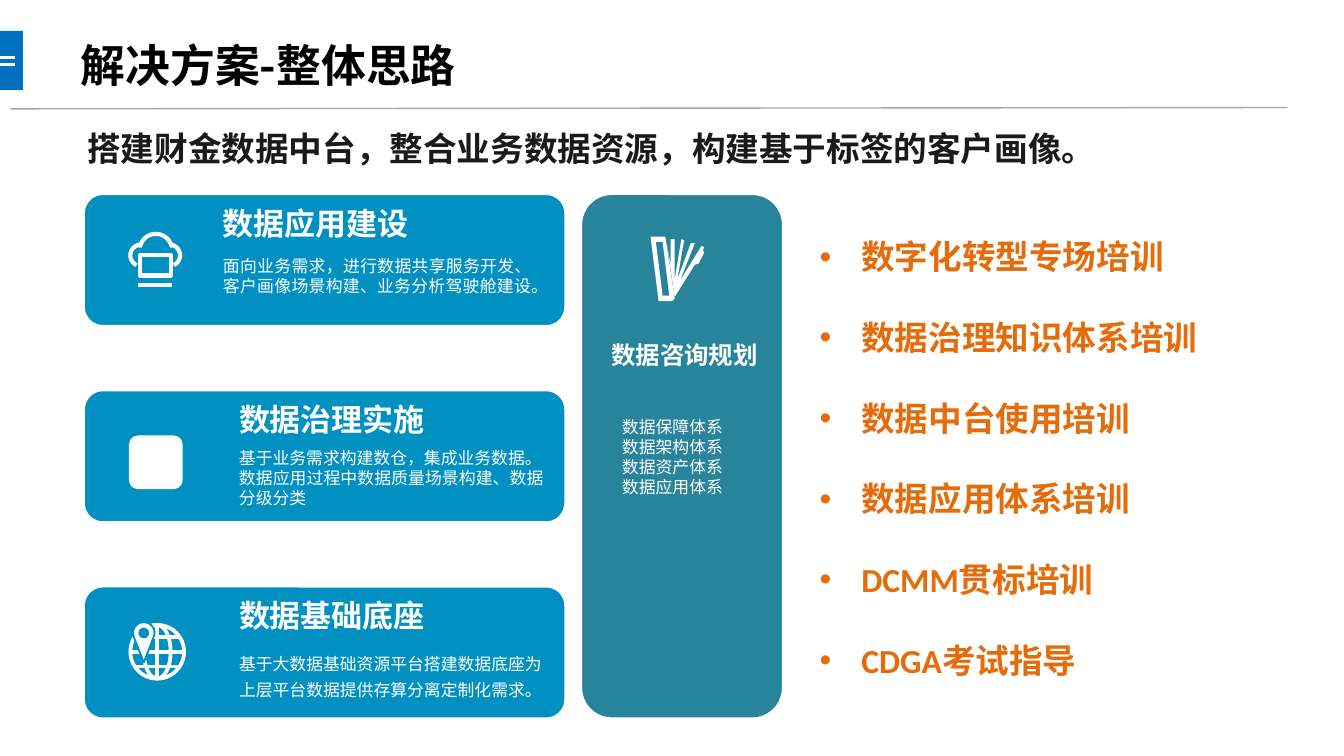
from math import cos, radians, sin, sqrt

from lxml.etree import SubElement
from pptx import Presentation
from pptx.dml.color import RGBColor
from pptx.enum.shapes import MSO_CONNECTOR, MSO_SHAPE
from pptx.enum.text import MSO_ANCHOR, PP_ALIGN
from pptx.oxml.ns import qn
from pptx.util import Inches, Pt

WHITE = RGBColor(0xFF, 0xFF, 0xFF)
BLACK = RGBColor(0, 0, 0)
INK = RGBColor(0x1A, 0x1A, 0x1A)
GREY = RGBColor(0xA6, 0xA6, 0xA6)
BLUE = RGBColor(0x00, 0x70, 0xC0)
SKY = RGBColor(0x00, 0x90, 0xC1)
TEAL = RGBColor(0x28, 0x84, 0x9B)
ORANGE = RGBColor(0xE4, 0x6C, 0x0A)

# Grid: a column of three cards, then the pillar
LEFT, TOP = 0.59, 1.41
CARD_W, CARD_H, STEP = 3.65, 1.05, 1.46
PILLAR_X, PILLAR_W = 4.29, 1.57

# Heading, body lines, text left, body width, body offset, alignment, spacing
CARDS = [
    ("数据应用建设",
     ["面向业务需求，进行数据共享服务开发、客户画像场景构建、业务分析驾驶舱建设。"],
     1.56, 2.49, 0.44, PP_ALIGN.JUSTIFY, None),
    ("数据治理实施",
     ["基于业务需求构建数仓，集成业务数据。",
      "数据应用过程中数据质量场景构建、数据分级分类"],
     1.68, 2.46, 0.41, PP_ALIGN.JUSTIFY, None),
    ("数据基础底座",
     ["基于大数据基础资源平台搭建数据底座为上层平台数据提供存算分离定制化需求。"],
     1.68, 2.48, 0.44, PP_ALIGN.LEFT, 1.3),
]
PLANS = ["数据保障体系", "数据架构体系", "数据资产体系", "数据应用体系"]
COURSES = ["数字化转型专场培训", "数据治理知识体系培训", "数据中台使用培训",
           "数据应用体系培训", "DCMM贯标培训", "CDGA考试指导"]


def style(para, size, color, bold=False, name="Calibri"):
    font = para.font
    font.size, font.bold, font.name = Pt(size), bold, name
    font.color.rgb = color
    props = para._p.get_or_add_pPr().find(qn("a:defRPr"))
    SubElement(props, qn("a:ea")).set("typeface", name)


def add_text(slide, box, lines, size, color, bold=False, name="Calibri",
             align=PP_ALIGN.LEFT, anchor=MSO_ANCHOR.TOP, space=None):
    frame = slide.shapes.add_textbox(*map(Inches, box)).text_frame
    frame.word_wrap, frame.vertical_anchor = True, anchor
    for i, line in enumerate(lines):
        para = frame.add_paragraph() if i else frame.paragraphs[0]
        para.text, para.alignment = line, align
        if space:
            para.line_spacing = space
        style(para, size, color, bold, name)
    return frame


def paint(shape, fill=None, line=None, width=1):
    shape.shadow.inherit = False
    if fill is None:
        shape.fill.background()
    else:
        shape.fill.solid()
        shape.fill.fore_color.rgb = fill
    if line is None:
        shape.line.fill.background()
    else:
        shape.line.color.rgb = line
        shape.line.width = Pt(width)


def add_box(slide, kind, box, fill=None, line=None, width=1):
    paint(slide.shapes.add_shape(kind, *map(Inches, box)), fill, line, width)


def add_line(slide, x1, y1, x2, y2, color, width):
    line = slide.shapes.add_connector(
        MSO_CONNECTOR.STRAIGHT, *map(Inches, (x1, y1, x2, y2)))
    line.line.color.rgb = color
    line.line.width = Pt(width)
    SubElement(line._element.spPr, qn("a:effectLst"))


def arc(x, y, r, start, end):
    return [(x + r * cos(radians(a)), y + r * sin(radians(a)))
            for a in range(start, end + 1, 10)]


def add_path(slide, loops, fill=None, line=None, width=1, close=True):
    loops = [[(Inches(x), Inches(y)) for x, y in loop] for loop in loops]
    build = slide.shapes.build_freeform(*loops[0][0], scale=1.0)
    for i, loop in enumerate(loops):
        if i:
            build.move_to(*loop[0])
        build.add_line_segments(loop[1:], close=close)
    paint(build.convert_to_shape(), fill, line, width)


def add_cloud(slide):
    edge = (arc(1.05, 1.9, 0.08, 115, 255) + arc(1.16, 1.86, 0.12, 195, 345)
            + arc(1.26, 1.9, 0.08, 285, 425))
    add_path(slide, [edge], line=WHITE, width=2.25, close=False)
    add_box(slide, MSO_SHAPE.RECTANGLE, (1.04, 1.9, 0.23, 0.15),
            SKY, WHITE, 2.25)
    add_line(slide, 1.03, 2.12, 1.28, 2.12, WHITE, 2.25)


def add_globe(slide):
    x, y, r = 1.17, 4.85, 0.2
    for half in (r, r / 2):
        add_box(slide, MSO_SHAPE.OVAL, (x - half, y - r, 2 * half, 2 * r),
                line=WHITE, width=2)
    add_line(slide, x, y - r, x, y + r, WHITE, 2)
    for rise in (-0.11, 0, 0.11):
        half = sqrt(r * r - rise * rise)
        add_line(slide, x - half, y + rise, x + half, y + rise, WHITE, 2)
    # Map pin over the globe
    pin = arc(1.07, 4.71, 0.08, 160, 380) + [(1.07, 4.93)]
    add_path(slide, [pin], WHITE, SKY, 1)
    add_box(slide, MSO_SHAPE.OVAL, (1.03, 4.67, 0.08, 0.08), SKY)


def add_book(slide):
    cover = [(4.84, 1.76), (4.95, 1.76), (5.02, 2.22), (5, 2.24), (4.9, 2.24)]
    hole = [(4.88, 1.8), (4.93, 1.8), (4.98, 2.2), (4.93, 2.2)]
    pages = [(4.96, 1.8), (4.99, 1.97), (4.99, 1.78), (5.02, 1.78),
             (5.02, 2.08), (5.07, 1.78), (5.09, 1.79), (5.04, 2.08),
             (5.14, 1.81), (5.17, 1.81), (5.06, 2.09), (5.22, 1.83),
             (5.24, 1.84), (5.23, 1.86), (5.24, 1.88), (5.2, 1.96),
             (5.17, 1.97), (5.02, 2.21)]
    add_path(slide, [cover, hole], WHITE)
    add_path(slide, [pages], WHITE)


def add_head(slide):
    # Side tab and rule
    add_box(slide, MSO_SHAPE.RECTANGLE, (0, 0.23, 0.17, 0.44), BLUE)
    for y in (0.43, 0.48):
        add_line(slide, 0, y, 0.11, y, WHITE, 1.5)
    add_line(slide, 9.58, 0.8, 0.08, 0.81, GREY, 0.75)
    # Title and lead sentence
    title = slide.shapes.title
    title.left, title.top, title.width, title.height = map(
        Inches, (0.5, 0.25, 8.33, 0.46))
    frame = title.text_frame
    frame.text, frame.vertical_anchor = "解决方案-整体思路", MSO_ANCHOR.MIDDLE
    para = frame.paragraphs[0]
    para.alignment = PP_ALIGN.LEFT
    style(para, 24, BLACK, True, "Noto Sans CJK SC")
    add_text(slide, (0.02, 0.9, 8.76, 0.4),
             ["搭建财金数据中台，整合业务数据资源，构建基于标签的客户画像。"],
             18, INK, True, align=PP_ALIGN.CENTER)


def add_card(slide, row, head, body, x, width, drop, align, space):
    y = TOP + row * STEP
    add_box(slide, MSO_SHAPE.ROUNDED_RECTANGLE, (LEFT, y, CARD_W, CARD_H),
            SKY, WHITE, 6)
    add_text(slide, (x, y + 0.08, 2.28, 0.36), [head], 16.6, WHITE, True,
             "Arial", anchor=MSO_ANCHOR.BOTTOM, space=0.9)
    add_text(slide, (x, y + drop, width, 0.52), body,
             9, WHITE, align=align, space=space)


def add_pillar(slide):
    add_box(slide, MSO_SHAPE.ROUNDED_RECTANGLE,
            (PILLAR_X, TOP, PILLAR_W, 2 * STEP + CARD_H), TEAL, WHITE, 6)
    add_book(slide)
    add_text(slide, (4.45, 2.44, 1.61, 0.36), ["数据咨询规划"], 13.1, WHITE,
             True, "Arial", anchor=MSO_ANCHOR.BOTTOM)
    add_text(slide, (4.53, 3.05, 1.2, 1.33), PLANS, 9, WHITE,
             align=PP_ALIGN.JUSTIFY)


def add_courses(slide):
    frame = add_text(slide, (6, 1.71, 3.85, 3.43), COURSES, 18, ORANGE, True)
    for i, para in enumerate(frame.paragraphs):
        if i:
            para.space_before = Pt(21.6)
        props = para._p.get_or_add_pPr()
        props.set("marL", str(Inches(0.31)))
        props.set("indent", str(-Inches(0.31)))
        # Bullet marks go ahead of the font settings
        font = props.find(qn("a:defRPr"))
        for tag, key, value in (("a:buFont", "typeface", "Arial"),
                                ("a:buChar", "char", "•")):
            mark = SubElement(props, qn(tag))
            mark.set(key, value)
            font.addprevious(mark)


def main():
    deck = Presentation()
    deck.slide_width = Inches(10)
    deck.slide_height = deck.slide_width * 9 // 16
    slide = deck.slides.add_slide(deck.slide_layouts[5])
    add_head(slide)
    for row, card in enumerate(CARDS):
        add_card(slide, row, *card)
    # Card icons
    add_cloud(slide)
    add_box(slide, MSO_SHAPE.ROUNDED_RECTANGLE, (0.96, 3.24, 0.4, 0.4), WHITE)
    add_globe(slide)
    add_pillar(slide)
    add_courses(slide)
    deck.save("out.pptx")


if __name__ == "__main__":
    main()
